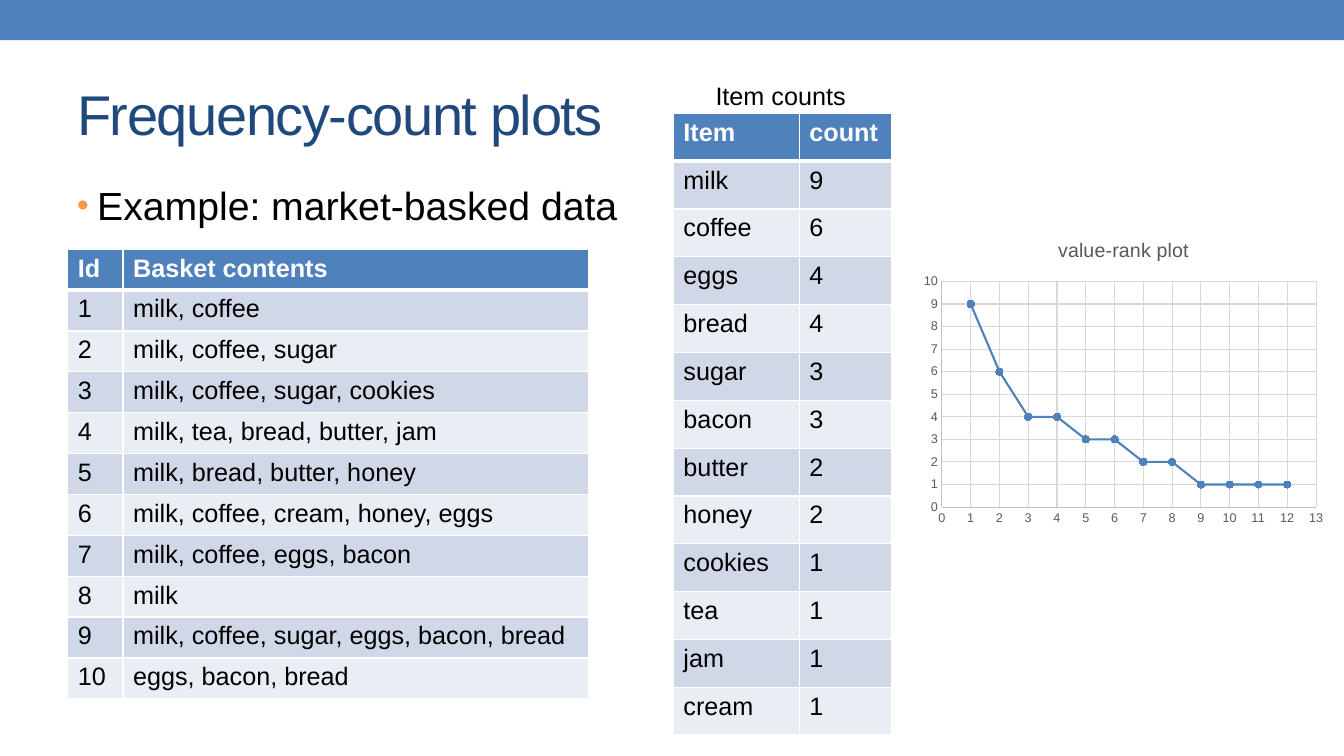
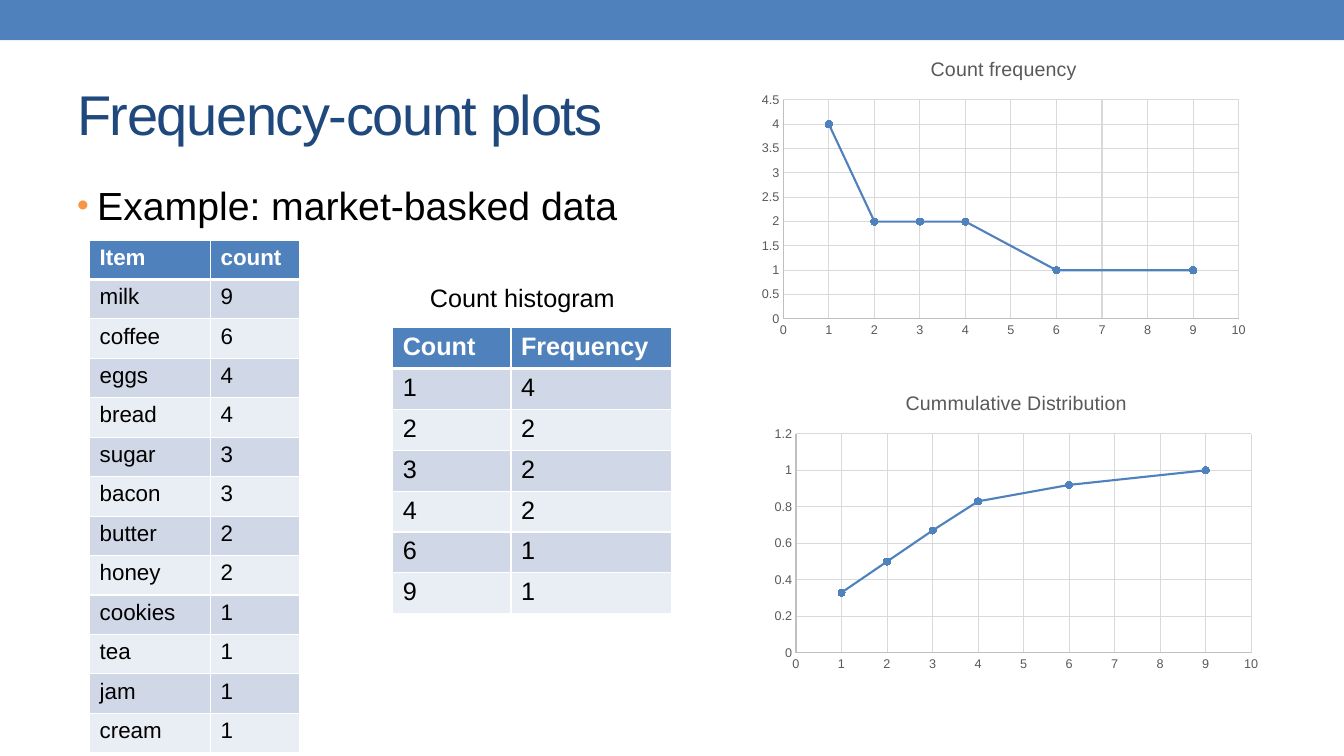
import pptx
import pptx.chart.data
import pptx.dml.color
import pptx.enum.chart
import pptx.enum.shapes
import pptx.enum.text
import pptx.oxml.ns
import pptx.util
from lxml import etree

Pt = pptx.util.Pt
RGBColor = pptx.dml.color.RGBColor

BLUE = RGBColor(0x4F, 0x81, 0xBD)
NAVY = RGBColor(0x1F, 0x49, 0x7D)
ORANGE = RGBColor(0xF7, 0x96, 0x46)
BLACK = RGBColor(0x00, 0x00, 0x00)
WHITE = RGBColor(0xFF, 0xFF, 0xFF)
ROW_DARK = RGBColor(0xD0, 0xD8, 0xE8)
ROW_LIGHT = RGBColor(0xE9, 0xED, 0xF4)
CHART_TEXT = RGBColor(0x59, 0x59, 0x59)
AXIS_LINE = RGBColor(0xBF, 0xBF, 0xBF)
GRID_LINE = RGBColor(0xD9, 0xD9, 0xD9)
FONT = "Arial"
SLIDE_W, SLIDE_H = 960, 540

BASKETS = [
    "milk, coffee",
    "milk, coffee, sugar",
    "milk, coffee, sugar, cookies",
    "milk, tea, bread, butter, jam",
    "milk, bread, butter, honey",
    "milk, coffee, cream, honey, eggs",
    "milk, coffee, eggs, bacon",
    "milk",
    "milk, coffee, sugar, eggs, bacon, bread",
    "eggs, bacon, bread",
]
ITEM_COUNTS = [
    ("milk", 9), ("coffee", 6), ("eggs", 4), ("bread", 4),
    ("sugar", 3), ("bacon", 3), ("butter", 2), ("honey", 2),
    ("cookies", 1), ("tea", 1), ("jam", 1), ("cream", 1),
]
HISTOGRAM = [(1, 4), (2, 2), (3, 2), (4, 2), (6, 1), (9, 1)]
CUMULATIVE = [(1, 0.33), (2, 0.5), (3, 0.67), (4, 0.83), (6, 0.92), (9, 1)]


def add_xml(parent, tag, **attrs):
    child = etree.SubElement(parent, pptx.oxml.ns.qn(tag))
    for name, value in attrs.items():
        child.set(name, str(value))
    return child


def style_font(font, size, color, bold=False):
    font.name = FONT
    font.size = Pt(size)
    font.bold = bold
    font.color.rgb = color


def add_run(p, text, size, color, bold=False):
    r = p.add_run()
    r.text = text
    style_font(r.font, size, color, bold)
    return r


def add_text_box(s, left, top, width, height, wrap=True):
    tf = s.shapes.add_textbox(Pt(left), Pt(top), Pt(width), Pt(height)).text_frame
    tf.word_wrap = wrap
    return tf


def add_band(s):
    sp = s.shapes.add_shape(pptx.enum.shapes.MSO_SHAPE.RECTANGLE,
                            0, 0, Pt(SLIDE_W), Pt(28.8))
    sp.shadow.inherit = False
    sp.fill.solid()
    sp.fill.fore_color.rgb = BLUE
    sp.line.fill.background()


def add_title(s, text):
    tf = add_text_box(s, 48, 42, 864, 78)
    tf.vertical_anchor = pptx.enum.text.MSO_ANCHOR.MIDDLE
    r = add_run(tf.paragraphs[0], text, 40, NAVY)
    r._r.get_or_add_rPr().set("spc", "-100")


def add_bullet(s, text):
    p = add_text_box(s, 48, 126, 864, 384).paragraphs[0]
    p.space_before = Pt(5.6)
    pPr = p._p.get_or_add_pPr()
    indent = int(Pt(14.4))
    pPr.set("marL", str(indent))
    pPr.set("indent", str(-indent))
    add_xml(add_xml(pPr, "a:buClr"), "a:srgbClr", val=ORANGE)
    add_xml(pPr, "a:buSzPct", val=85000)
    add_xml(pPr, "a:buFont", typeface=FONT)
    add_xml(pPr, "a:buChar", char="•")
    add_run(p, text, 28, BLACK)


def add_caption(s, text, left, top, width):
    tf = add_text_box(s, left, top, width, 29, wrap=False)
    add_run(tf.paragraphs[0], text, 18, BLACK)


def add_borders(cell, top, bottom):
    """Draw white cell borders; top and bottom are widths in points."""
    tcPr = cell._tc.get_or_add_tcPr()
    for side, width in (("L", 1), ("R", 1), ("T", top), ("B", bottom)):
        ln = add_xml(tcPr, "a:ln" + side, w=int(Pt(width)))
        add_xml(add_xml(ln, "a:solidFill"), "a:srgbClr", val=WHITE)


def add_table(s, left, top, col_widths, row_height, header, rows, size=18):
    cells = [header, *rows]
    table = s.shapes.add_table(len(cells), len(header), Pt(left), Pt(top),
                               Pt(sum(col_widths)), Pt(row_height * len(cells))).table
    for column, width in zip(table.columns, col_widths):
        column.width = Pt(width)
    for i, values in enumerate(cells):
        is_header = i == 0
        table.rows[i].height = Pt(row_height)
        fill = BLUE if is_header else ROW_DARK if i % 2 else ROW_LIGHT
        for j, value in enumerate(values):
            cell = table.cell(i, j)
            add_borders(cell, 3 if i == 1 else 1, 3 if is_header else 1)
            cell.fill.solid()
            cell.fill.fore_color.rgb = fill
            add_run(cell.text_frame.paragraphs[0], str(value), size,
                    WHITE if is_header else BLACK, is_header)


def style_axis(axis, maximum, unit):
    axis.minimum_scale = 0
    axis.maximum_scale = maximum
    axis.major_unit = unit
    axis.has_major_gridlines = True
    axis.major_tick_mark = axis.minor_tick_mark = pptx.enum.chart.XL_TICK_MARK.NONE
    for line, color in ((axis.format.line, AXIS_LINE),
                        (axis.major_gridlines.format.line, GRID_LINE)):
        line.color.rgb = color
        line.width = Pt(0.75)
    style_font(axis.tick_labels.font, 9, CHART_TEXT)
    axis.tick_labels.number_format = "General"
    axis.tick_labels.number_format_is_linked = False


def add_scatter(s, left, top, width, height, title, points, x_max, y_max, y_unit):
    data = pptx.chart.data.XyChartData()
    series = data.add_series("Series 1")
    for x, y in points:
        series.add_data_point(x, y)
    chart = s.shapes.add_chart(pptx.enum.chart.XL_CHART_TYPE.XY_SCATTER_LINES,
                               Pt(left), Pt(top), Pt(width), Pt(height), data).chart
    style_font(chart.font, 10, BLACK)
    chart.has_legend = False
    chart.has_title = True
    add_run(chart.chart_title.text_frame.paragraphs[0], title, 14, CHART_TEXT)
    chart.chart_title.include_in_layout = False
    style_axis(chart.category_axis, x_max, 1)
    style_axis(chart.value_axis, y_max, y_unit)

    plot = chart.plots[0]
    plot.vary_by_categories = False
    line = plot.series[0]
    line.format.line.color.rgb = BLUE
    line.format.line.width = Pt(1.5)
    marker = line.marker
    marker.style = pptx.enum.chart.XL_MARKER_STYLE.CIRCLE
    marker.size = 5
    marker.format.fill.solid()
    marker.format.fill.fore_color.rgb = BLUE
    marker.format.line.color.rgb = BLUE


def add_slide(prs):
    """Add a slide with the band, title and bullet that all slides share."""
    s = prs.slides.add_slide(prs.slide_layouts[6])
    add_band(s)
    add_title(s, "Frequency-count plots")
    add_bullet(s, "Example: market-basked data")
    return s


def add_value_rank_slide(prs):
    s = add_slide(prs)
    add_table(s, 48.5, 178, (39.4, 332.6), 29.2,
              ("Id", "Basket contents"), list(enumerate(BASKETS, 1)))
    add_table(s, 481, 81, (90, 66), 34.18, ("Item", "count"), ITEM_COUNTS)
    add_caption(s, "Item counts", 504, 54, 109)
    ranked = [(rank, count) for rank, (_, count) in enumerate(ITEM_COUNTS, 1)]
    add_scatter(s, 654, 159, 297, 221, "value-rank plot", ranked, 13, 10, 1)


def add_histogram_slide(prs):
    s = add_slide(prs)
    add_table(s, 280.5, 234, (84.5, 115), 29.2, ("Count", "Frequency"), HISTOGRAM)
    add_table(s, 64, 171.4, (86.4, 63.4), 28.2, ("Item", "count"), ITEM_COUNTS, size=16)
    add_caption(s, "Count histogram", 300, 198, 148)
    add_scatter(s, 537, 29.5, 360, 216, "Count frequency", HISTOGRAM, 10, 4.5, 0.5)
    add_scatter(s, 546, 268, 360, 216, "Cummulative Distribution", CUMULATIVE, 10, 1.2, 0.2)


def main():
    prs = pptx.Presentation()
    prs.slide_width = Pt(SLIDE_W)
    prs.slide_height = Pt(SLIDE_H)
    add_value_rank_slide(prs)
    add_histogram_slide(prs)
    prs.save("out.pptx")


if __name__ == "__main__":
    main()
